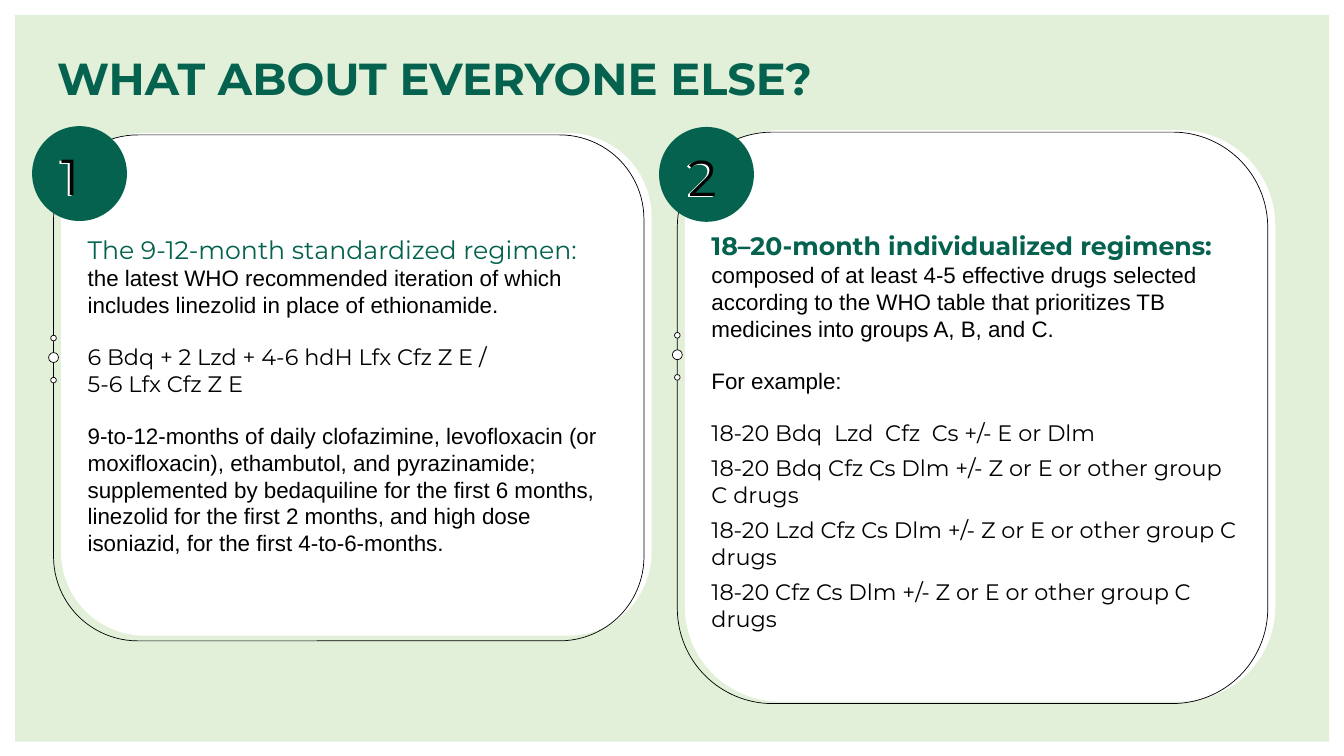
from copy import deepcopy

from pptx import Presentation
from pptx.dml.color import RGBColor
from pptx.enum.shapes import MSO_SHAPE
from pptx.util import Cm, Pt

RECTANGLE = MSO_SHAPE.RECTANGLE
ROUNDED = MSO_SHAPE.ROUNDED_RECTANGLE
OVAL = MSO_SHAPE.OVAL

PALE_GREEN = RGBColor(0xE2, 0xF0, 0xD9)
DARK_GREEN = RGBColor(0x04, 0x62, 0x4F)
WHITE = RGBColor(0xFF, 0xFF, 0xFF)
BLACK = RGBColor(0x00, 0x00, 0x00)

HEADING = {"name": "Montserrat", "size": Pt(18), "bold": False}
BOLD_HEADING = {**HEADING, "bold": True}
PROSE = {"name": "Arial", "size": Pt(16), "bold": False}
REGIMEN = {**PROSE, "name": "Montserrat"}
TITLE = {"name": "Montserrat", "size": Pt(32), "bold": True}
NUMBER = {"name": "Montserrat", "size": Pt(36)}

# Boxes are left, top, width, height in cm.
# A paragraph is its space after in points, then its lines as (text, format, colour).
CARDS = [
    {
        "number": "1",
        "outline": (1.35, 3.4, 14.88, 12.75),
        "panel_height": 12.67,
        "badge": (0.81, 3.18),
        "body": (1.96, 5.77, 13.97, 8.56),
        "paragraphs": [
            (18, [
                ("The 9-12-month standardized regimen:", HEADING, DARK_GREEN),
                ("the latest WHO recommended iteration of which includes "
                 "linezolid in place of ethionamide.", PROSE, BLACK),
            ]),
            (18, [
                ("6 Bdq + 2 Lzd + 4-6 hdH Lfx Cfz Z E / ", REGIMEN, BLACK),
                ("5-6 Lfx Cfz Z E", REGIMEN, BLACK),
            ]),
            (18, [
                ("9-to-12-months of daily clofazimine, levofloxacin (or "
                 "moxifloxacin), ethambutol, and pyrazinamide; supplemented by "
                 "bedaquiline for the first 6 months, linezolid for the first 2 "
                 "months, and high dose isoniazid, for the first 4-to-6-months.",
                 PROSE, BLACK),
            ]),
        ],
    },
    {
        "number": "2",
        "outline": (17.07, 3.33, 14.88, 14.4),
        "panel_height": 14.4,
        "badge": (16.61, 3.2),
        "body": (17.68, 5.69, 13.82, 10.46),
        "paragraphs": [
            (18, [
                ("18–20-month individualized regimens:", BOLD_HEADING, DARK_GREEN),
                ("composed of at least 4-5 effective drugs selected according to "
                 "the WHO table that prioritizes TB medicines into groups A, B, "
                 "and C.", PROSE, BLACK),
            ]),
            (18, [("For example:", PROSE, BLACK)]),
            (6, [("18-20 Bdq  Lzd  Cfz  Cs +/- E or Dlm", REGIMEN, BLACK)]),
            (6, [("18-20 Bdq Cfz Cs Dlm +/- Z or E or other group C drugs", REGIMEN, BLACK)]),
            (6, [("18-20 Lzd Cfz Cs Dlm +/- Z or E or other group C drugs", REGIMEN, BLACK)]),
            (6, [("18-20 Cfz Cs Dlm +/- Z or E or other group C drugs", REGIMEN, BLACK)]),
        ],
    },
]

# Dots on the left edge: distance below the card top, diameter
DOTS = [(5.12, 0.14), (6.18, 0.14), (5.61, 0.25)]

# The white numeral peeks out behind the black one
NUMERALS = [(0.43, 0.38, WHITE), (0.48, 0.36, BLACK)]

presentation = Presentation()
presentation.slide_width = Cm(33.87)
presentation.slide_height = Cm(19.05)
slide = presentation.slides.add_slide(presentation.slide_layouts[6])


def add_shape(kind, box, fill=None, outlined=False):
    shape = slide.shapes.add_shape(kind, *map(Cm, box))
    shape.shadow.inherit = False
    if fill is None:
        shape.fill.background()
    else:
        shape.fill.solid()
        shape.fill.fore_color.rgb = fill
    if outlined:
        shape.line.color.rgb = BLACK
        shape.line.width = Pt(0.5)
    else:
        shape.line.fill.background()


def add_text(box, paragraphs, line_spacing=None):
    """Add a wrapped text box; line breaks take the format of the line they end."""
    frame = slide.shapes.add_textbox(*map(Cm, box)).text_frame
    frame.word_wrap = True
    for index, (space_after, lines) in enumerate(paragraphs):
        paragraph = frame.add_paragraph() if index else frame.paragraphs[0]
        paragraph.space_after = Pt(space_after)
        paragraph.line_spacing = line_spacing
        for position, (text, font_format, color) in enumerate(lines):
            if position:
                paragraph.add_line_break()
                paragraph._p[-1].append(deepcopy(run._r.rPr))
            run = paragraph.add_run()
            run.text = text
            run.font.color.rgb = color
            for name, value in font_format.items():
                setattr(run.font, name, value)


add_shape(RECTANGLE, (0.38, 0.38, 33.12, 18.31), PALE_GREEN)
add_text((1.19, 1.3, 27.86, 2.01),
         [(0, [("WHAT ABOUT EVERYONE ELSE?", TITLE, DARK_GREEN)])], 0.9)

for card in CARDS:
    left, top, width, height = card["outline"]
    add_shape(ROUNDED, (left + 0.19, top - 0.05, width, card["panel_height"]), WHITE)
    add_shape(ROUNDED, card["outline"], outlined=True)
    for drop, diameter in DOTS:
        dot_box = (left - diameter / 2, top + drop - diameter / 2, diameter, diameter)
        add_shape(OVAL, dot_box, WHITE, outlined=True)

    badge_left, badge_top = card["badge"]
    add_shape(OVAL, (badge_left, badge_top, 2.39, 2.39), DARK_GREEN)
    for shift, drop, color in NUMERALS:
        add_text((badge_left + shift, badge_top + drop, 1.24, 1.8),
                 [(0, [(card["number"], NUMBER, color)])])
    add_text(card["body"], card["paragraphs"])

presentation.save("out.pptx")
